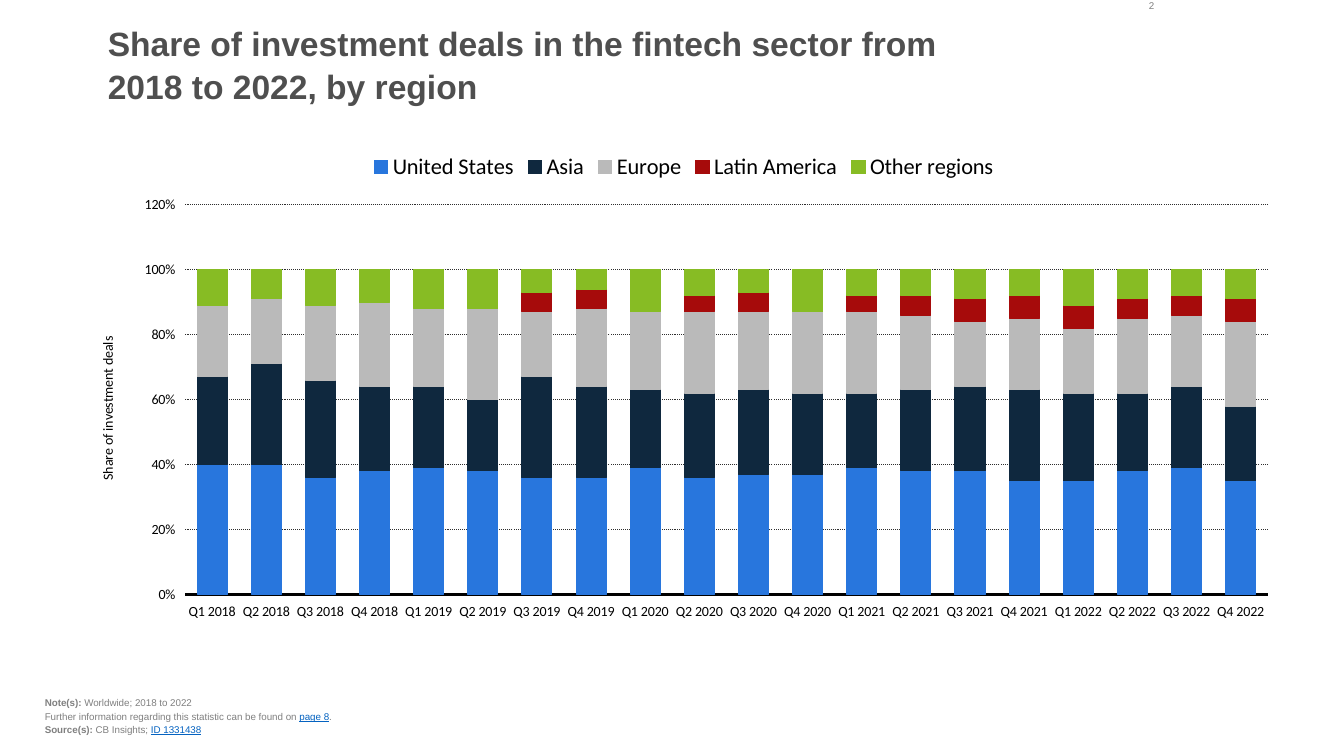
from dataclasses import dataclass

from lxml.etree import SubElement
from pptx import Presentation
from pptx.chart.data import CategoryChartData
from pptx.dml.color import RGBColor
from pptx.enum.chart import XL_CHART_TYPE, XL_LEGEND_POSITION, XL_TICK_LABEL_POSITION, XL_TICK_MARK
from pptx.enum.dml import MSO_LINE
from pptx.enum.text import MSO_ANCHOR, MSO_AUTO_SIZE, PP_ALIGN
from pptx.oxml.ns import qn
from pptx.util import Pt


@dataclass(frozen=True)
class Theme:
    text_font: str = "Arial"
    chart_font: str = "Calibri"
    title: str = "4F4F4F"
    muted: str = "808080"
    link: str = "0563C1"
    ink: str = "000000"
    grid: str = "2F2F2F"
    regions: tuple = ("2876DD", "0F283E", "BABABA", "A60B0B", "87BC24")
    title_size: int = 24
    small_size: int = 7
    chart_size: int = 18
    legend_size: int = 16
    axis_size: int = 10


QUARTERS = [f"Q{q} {year}" for year in range(2018, 2023) for q in range(1, 5)]

# Percentages per quarter; None where a region is not reported
SHARES = {
    "United States": [40, 40, 36, 38, 39, 38, 36, 36, 39, 36,
                      37, 37, 39, 38, 38, 35, 35, 38, 39, 35],
    "Asia": [27, 31, 30, 26, 25, 22, 31, 28, 24, 26,
             26, 25, 23, 25, 26, 28, 27, 24, 25, 23],
    "Europe": [22, 20, 23, 26, 24, 28, 20, 24, 24, 25,
               24, 25, 25, 23, 20, 22, 20, 23, 22, 26],
    "Latin America": [None, None, None, None, None, None, 6, 6, None, 5,
                      6, None, 5, 6, 7, 7, 7, 6, 6, 7],
    "Other regions": [11, 9, 11, 10, 12, 12, 7, 6, 13, 8,
                      7, 13, 8, 8, 9, 8, 11, 9, 8, 9],
}


class SlideBuilder:
    def __init__(self, s, theme):
        self.s, self.theme = s, theme

    def font(self, font, name, size, color, bold=False):
        font.name, font.size, font.bold = name, Pt(size), bold
        font.color.rgb = RGBColor.from_string(color)

    def frame(self, sp, anchor):
        tf = sp.text_frame
        tf.word_wrap, tf.auto_size, tf.vertical_anchor = True, MSO_AUTO_SIZE.NONE, anchor
        tf.margin_left = tf.margin_top = tf.margin_right = tf.margin_bottom = 0
        return tf

    def title(self, box, text):
        sp = self.s.shapes.title
        sp.left, sp.top, sp.width, sp.height = map(Pt, box)
        p = self.frame(sp, MSO_ANCHOR.TOP).paragraphs[0]
        p.alignment, p.line_spacing = PP_ALIGN.LEFT, 1.06
        r = p.add_run()
        r.text = text
        self.font(r.font, self.theme.text_font, self.theme.title_size, self.theme.title, True)

    def small_text(self, box, lines, align=PP_ALIGN.LEFT, anchor=MSO_ANCHOR.TOP):
        """Each line is a list of (text, style) runs; style is "", "bold" or "link"."""
        tf = self.frame(self.s.shapes.add_textbox(*map(Pt, box)), anchor)
        for i, line in enumerate(lines):
            p = tf.add_paragraph() if i else tf.paragraphs[0]
            p.alignment, p.space_after = align, Pt(0.9)
            for text, style in line:
                r = p.add_run()
                r.text = text
                color = self.theme.link if style == "link" else self.theme.muted
                self.font(r.font, self.theme.text_font, self.theme.small_size, color, style == "bold")
                r.font.underline = style == "link"

    def stacked_columns(self, box, categories, shares, axis_title):
        t = self.theme
        data = CategoryChartData(number_format="0%")
        data.categories = categories
        for name, percents in shares.items():
            data.add_series(name, [None if v is None else v / 100 for v in percents])
        chart = self.s.shapes.add_chart(XL_CHART_TYPE.COLUMN_STACKED, *map(Pt, box), data).chart
        self.font(chart.font, t.chart_font, t.chart_size, t.ink)
        chart.has_title = False
        chart.has_legend = True
        chart.legend.position = XL_LEGEND_POSITION.TOP
        chart.legend.include_in_layout = False
        self.font(chart.legend.font, t.chart_font, t.legend_size, t.ink)

        plot = chart.plots[0]
        plot.gap_width, plot.overlap, plot.vary_by_categories = 80, 100, False
        for series, color in zip(plot.series, t.regions):
            rgb = RGBColor.from_string(color)
            series.format.fill.solid()
            series.format.fill.fore_color.rgb = rgb
            series.format.line.color.rgb = rgb
            series.format.line.width = Pt(0.75)

        for axis in (chart.category_axis, chart.value_axis):
            axis.major_tick_mark = axis.minor_tick_mark = XL_TICK_MARK.NONE
            axis.tick_label_position = XL_TICK_LABEL_POSITION.LOW
            self.font(axis.tick_labels.font, t.chart_font, t.axis_size, t.ink)
        base = chart.category_axis.format.line
        base.color.rgb, base.width = RGBColor.from_string(t.ink), Pt(2)

        values = chart.value_axis
        values.minimum_scale, values.maximum_scale, values.major_unit = 0, 1.2, 0.2
        values.tick_labels.number_format = "#,##0%"
        values.tick_labels.number_format_is_linked = False
        values.format.line.fill.background()
        grid = values.major_gridlines.format.line
        grid.color.rgb, grid.width = RGBColor.from_string(t.grid), Pt(0.75)
        grid.dash_style = MSO_LINE.ROUND_DOT
        r = values.axis_title.text_frame.paragraphs[0].add_run()
        r.text = axis_title
        self.font(r.font, t.chart_font, t.axis_size, t.ink)
        self.place_plot(chart, x=0.09, y=0.13, w=0.89, h=0.8)

    def place_plot(self, chart, **fractions):
        """Fix the inner plot area as fractions of the chart frame."""
        area = chart.plots[0]._element.getparent()
        for old in area.findall(qn("c:layout")):
            area.remove(old)
        layout = SubElement(area, qn("c:layout"))
        area.insert(0, layout)
        manual = SubElement(layout, qn("c:manualLayout"))
        settings = {"layoutTarget": "inner", "xMode": "edge", "yMode": "edge", **fractions}
        for tag, value in settings.items():
            SubElement(manual, qn(f"c:{tag}")).set("val", str(value))


def main():
    prs = Presentation()
    prs.slide_width, prs.slide_height = Pt(960), Pt(540)
    slide = SlideBuilder(prs.slides.add_slide(prs.slide_layouts[5]), Theme())
    slide.title((77, 15, 646.5, 68),
                "Share of investment deals in the fintech sector from 2018 to 2022, by region")
    slide.small_text((32, 483, 635, 42), [
        [("Note(s):", "bold"), (" Worldwide; 2018 to 2022", "")],
        [("Further information regarding this statistic can be found on ", ""),
         ("page 8", "link"), (".", "")],
        [("Source(s): ", "bold"), ("CB Insights; ", ""), ("ID 1331438", "link")],
    ], anchor=MSO_ANCHOR.BOTTOM)
    slide.stacked_columns((54, 101, 869, 348), QUARTERS, SHARES, "Share of investment deals")
    slide.small_text((790, 0, 34.5, 16), [[("2", "")]], align=PP_ALIGN.RIGHT)
    prs.save("out.pptx")


if __name__ == "__main__":
    main()
